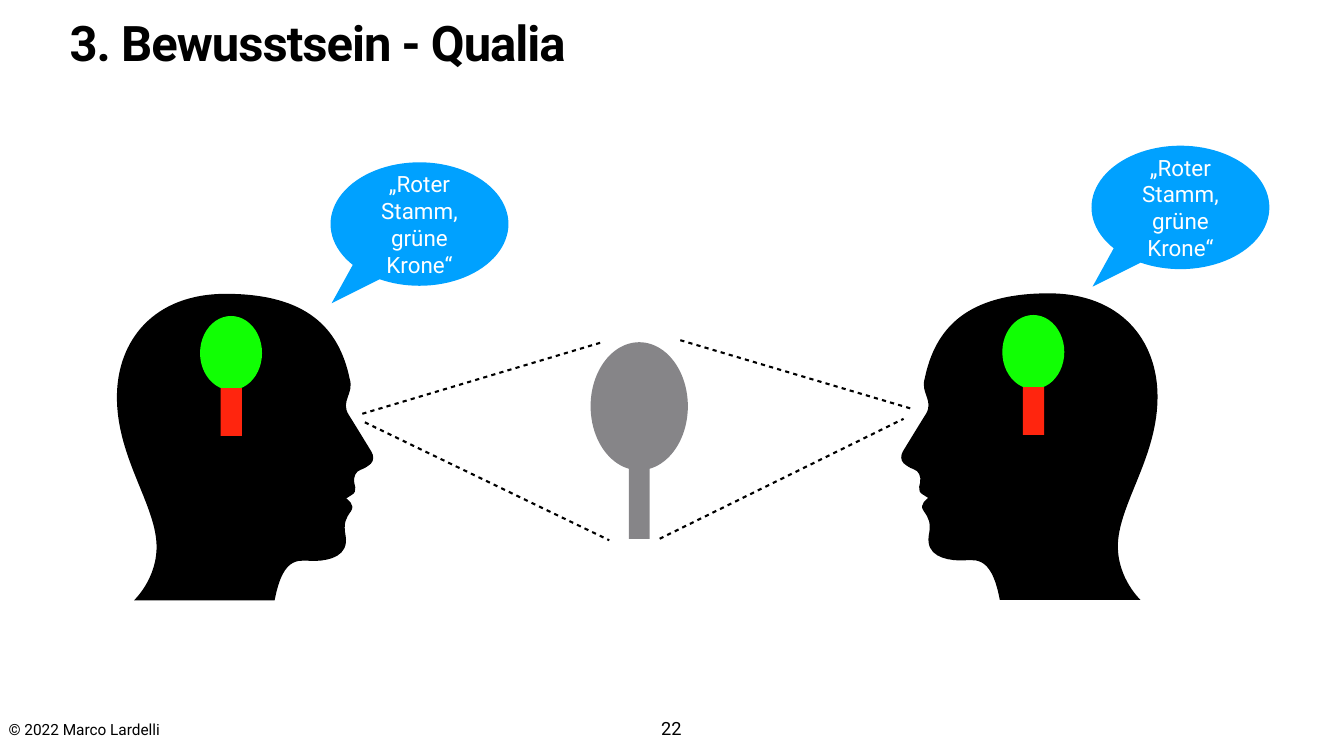
import pptx
import pptx.util
import pptx.dml.color
import pptx.enum.shapes
import pptx.enum.text
import pptx.oxml
import pptx.oxml.ns

Inches = pptx.util.Inches
Shape = pptx.enum.shapes.MSO_SHAPE
Align = pptx.enum.text.PP_ALIGN
Anchor = pptx.enum.text.MSO_ANCHOR
AutoSize = pptx.enum.text.MSO_AUTO_SIZE
NAMESPACE = pptx.oxml.ns.nsdecls("a")

WIDTH, HEIGHT = 26.67, 15
FONT = "Roboto"
COLORS = {"black": "000000", "white": "FFFFFF", "bubble": "00A1FF",
          "object": "868588", "crown": "11FF04", "trunk": "FF250E"}

TITLE = "3. Bewusstsein - Qualia"
FOOTER = "© 2022 Marco Lardelli"
PAGE_NUMBER = "22"
QUOTE = "„Roter Stamm, grüne Krone“"

# Boxes are (left, top, width, height) in inches on the slide.
TITLE_BOX = (1.32, 0.42, 24.03, 1.57)
FOOTER_BOX = (0.11, 14.25, 3.15, 0.48)
NUMBER_BOX = (13.06, 14.17, 0.53, 0.55)
BUBBLE_SIZE = (3.53, 2.45)
BUBBLE_TAIL = (-0.494, 0.642)
BUBBLE_CORNERS = [(6.56, 3.22), (21.66, 2.89)]

# The seen tree, then the tree imagined in each head.
SEEN_TREE = ((11.72, 6.79, 1.93, 2.54), (12.48, 9.3, 0.41, 1.39))
IMAGINED_CROWN = (1.23, 1.47)
IMAGINED_TRUNK = (0.42, 0.95)
TRUNK_OFFSET = (0.41, 1.43)
IMAGINED_CORNERS = [(3.97, 6.27), (19.89, 6.25)]

SIGHT_LINES = [((7.24, 8.38), (12.09, 10.72)), ((7.19, 8.21), (11.95, 6.79)),
               ((13.5, 6.75), (18.09, 8.11)), ((13.09, 10.69), (17.93, 8.31))]

# Head looking right: six numbers are a Bézier curve, two are a straight line.
HEAD_BOX = (2.32, 5.83, 5.08, 6.08)
HEAD_START = (4.48, 5.83)
HEAD_OUTLINE = [
    (3.05, 5.83, 2.32, 6.76, 2.32, 7.88), (2.32, 8.99, 2.97, 9.85, 3.09, 10.63),
    (3.21, 11.4, 2.66, 11.91, 2.66, 11.91), (5.45, 11.91),
    (5.63, 10.96, 5.97, 11.14, 6.26, 11.13), (6.55, 11.12, 6.92, 11.03, 6.86, 10.64),
    (6.81, 10.38, 6.86, 10.29, 6.96, 10.15), (7.07, 10.01, 6.87, 9.89, 6.87, 9.89),
    (6.98, 9.82), (7.04, 9.79, 7.06, 9.73, 7.05, 9.67),
    (7.04, 9.64, 7.04, 9.61, 7.03, 9.58), (7.01, 9.46, 7.06, 9.35, 7.16, 9.32),
    (7.25, 9.29, 7.31, 9.24, 7.36, 9.2), (7.42, 9.14, 7.42, 9.04, 7.37, 8.96),
    (7.21, 8.7, 7.04, 8.42, 6.92, 8.23), (6.75, 7.96, 7.03, 7.81, 6.94, 7.52),
    (6.73, 6.51, 6.09, 5.83, 4.48, 5.83)]
MIRROR_SHIFT = (15.57, -0.01)


def rgb(name):
    return pptx.dml.color.RGBColor.from_string(COLORS[name])


def inches(values):
    return [Inches(value) for value in values]


def place(shape, box):
    for name, value in zip(("left", "top", "width", "height"), inches(box)):
        setattr(shape, name, value)


def paint(shape, color):
    shape.shadow.inherit = False
    shape.fill.solid()
    shape.fill.fore_color.rgb = rgb(color)
    shape.line.fill.background()


def write(shape, text, size, color="black", bold=False, align=Align.LEFT,
          line_spacing=None, **frame_format):
    frame = shape.text_frame
    margins = {f"margin_{side}": Inches(0.06) for side in ("left", "top", "right", "bottom")}
    for name, value in {"word_wrap": True, **margins, **frame_format}.items():
        setattr(frame, name, value)
    paragraph = frame.paragraphs[0]
    paragraph.alignment = align
    paragraph.line_spacing = line_spacing
    run = paragraph.add_run()
    run.text = text
    for name, value in {"name": FONT, "size": pptx.util.Pt(size), "bold": bold}.items():
        setattr(run.font, name, value)
    run.font.color.rgb = rgb(color)
    return run


def add_preset(shapes, preset, box, color):
    shape = shapes.add_shape(preset, *inches(box))
    paint(shape, color)
    return shape


def add_tree(shapes, crown, trunk, crown_color, trunk_color):
    add_preset(shapes, Shape.OVAL, crown, crown_color)
    add_preset(shapes, Shape.RECTANGLE, trunk, trunk_color)


def add_head(shapes, mirrored=False):
    """Build the head from its corner points, then bend its edges into curves."""
    left, top, width, height = HEAD_BOX

    def local(x, y):
        x -= left
        return Inches(width - x if mirrored else x), Inches(y - top)

    builder = shapes.build_freeform(*local(*HEAD_START), scale=1.0)
    builder.add_line_segments([local(*segment[-2:]) for segment in HEAD_OUTLINE])
    head = builder.convert_to_shape()
    paint(head, "black")
    shift_x, shift_y = MIRROR_SHIFT if mirrored else (0, 0)
    place(head, (left + shift_x, top + shift_y, width, height))

    outline = head._element.xpath(".//a:path")[0]
    outline.set("w", str(Inches(width)))
    outline.set("h", str(Inches(height)))
    for child in list(outline):
        outline.remove(child)
    for index, segment in enumerate([HEAD_START] + HEAD_OUTLINE):
        tag = "moveTo" if index == 0 else "lnTo" if len(segment) == 2 else "cubicBezTo"
        corners = [local(*pair) for pair in zip(segment[::2], segment[1::2])]
        points = "".join(f'<a:pt x="{x}" y="{y}"/>' for x, y in corners)
        outline.append(pptx.oxml.parse_xml(f"<a:{tag} {NAMESPACE}>{points}</a:{tag}>"))
    outline.append(pptx.oxml.parse_xml(f"<a:close {NAMESPACE}/>"))


def add_sight_line(shapes, start, end):
    line = shapes.add_connector(pptx.enum.shapes.MSO_CONNECTOR.STRAIGHT,
                                *inches(start + end))
    line.line.width = pptx.util.Pt(3)
    line.line.color.rgb = rgb("black")
    line.line._get_or_add_ln().append(pptx.oxml.parse_xml(
        f'<a:custDash {NAMESPACE}><a:ds d="200000" sp="200000"/></a:custDash>'))
    line._element.spPr.append(pptx.oxml.parse_xml(f"<a:effectLst {NAMESPACE}/>"))


def main():
    presentation = pptx.Presentation()
    presentation.slide_width, presentation.slide_height = inches((WIDTH, HEIGHT))
    slide = presentation.slides.add_slide(presentation.slide_layouts[5])
    shapes = slide.shapes

    write(shapes.add_textbox(*inches(FOOTER_BOX)), FOOTER, 22, line_spacing=0.9,
          word_wrap=False, vertical_anchor=Anchor.MIDDLE,
          auto_size=AutoSize.SHAPE_TO_FIT_TEXT)
    place(shapes.title, TITLE_BOX)
    title_run = write(shapes.title, TITLE, 70, bold=True, line_spacing=0.8,
                      vertical_anchor=Anchor.TOP, auto_size=AutoSize.NONE)
    title_run.font._element.set("spc", "-140")
    write(shapes.add_textbox(*inches(NUMBER_BOX)), PAGE_NUMBER, 26, align=Align.CENTER,
          word_wrap=False, vertical_anchor=Anchor.BOTTOM,
          auto_size=AutoSize.SHAPE_TO_FIT_TEXT)

    add_tree(shapes, *reversed(SEEN_TREE[::-1]), "object", "object")
    for mirrored in (False, True):
        add_head(shapes, mirrored)
    for start, end in SIGHT_LINES:
        add_sight_line(shapes, start, end)

    for corner in BUBBLE_CORNERS:
        bubble = add_preset(shapes, Shape.OVAL_CALLOUT, corner + BUBBLE_SIZE, "bubble")
        for index, value in enumerate(BUBBLE_TAIL):
            bubble.adjustments[index] = value
        write(bubble, QUOTE, 32, color="white", align=Align.CENTER,
              vertical_anchor=Anchor.MIDDLE)

    for left, top in IMAGINED_CORNERS:
        trunk_corner = (left + TRUNK_OFFSET[0], top + TRUNK_OFFSET[1])
        add_tree(shapes, (left, top) + IMAGINED_CROWN, trunk_corner + IMAGINED_TRUNK,
                 "crown", "trunk")

    presentation.save("out.pptx")


if __name__ == "__main__":
    main()
